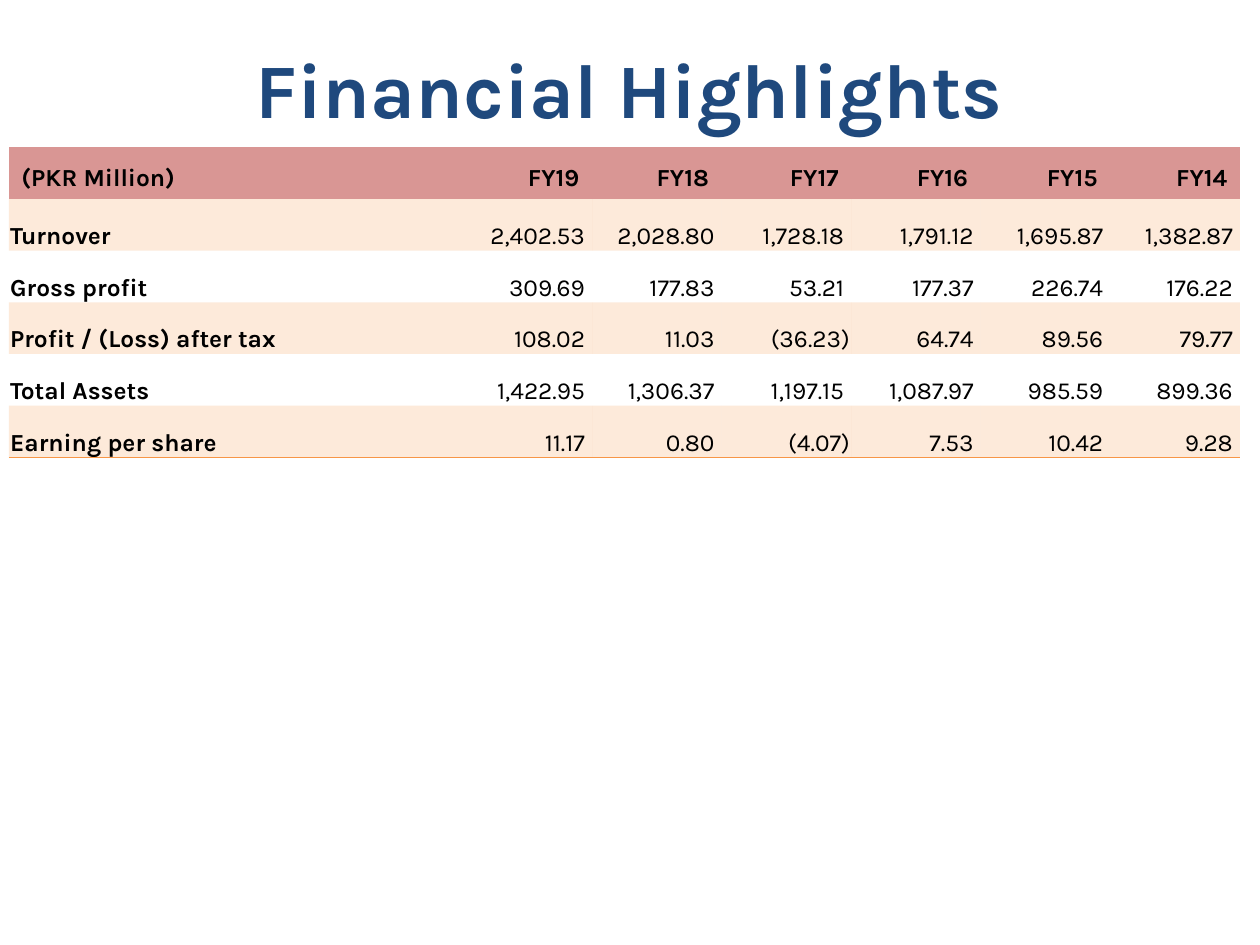
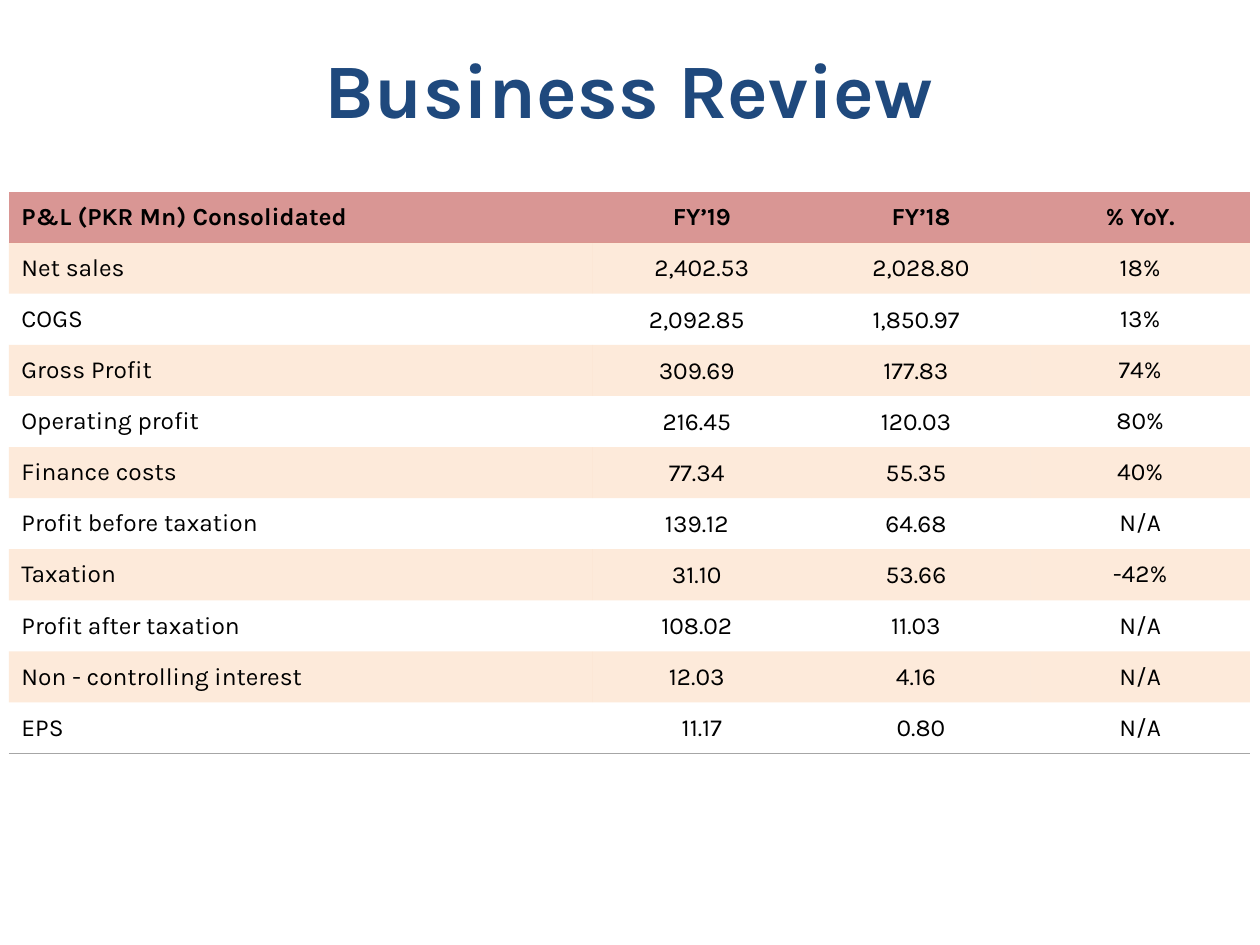
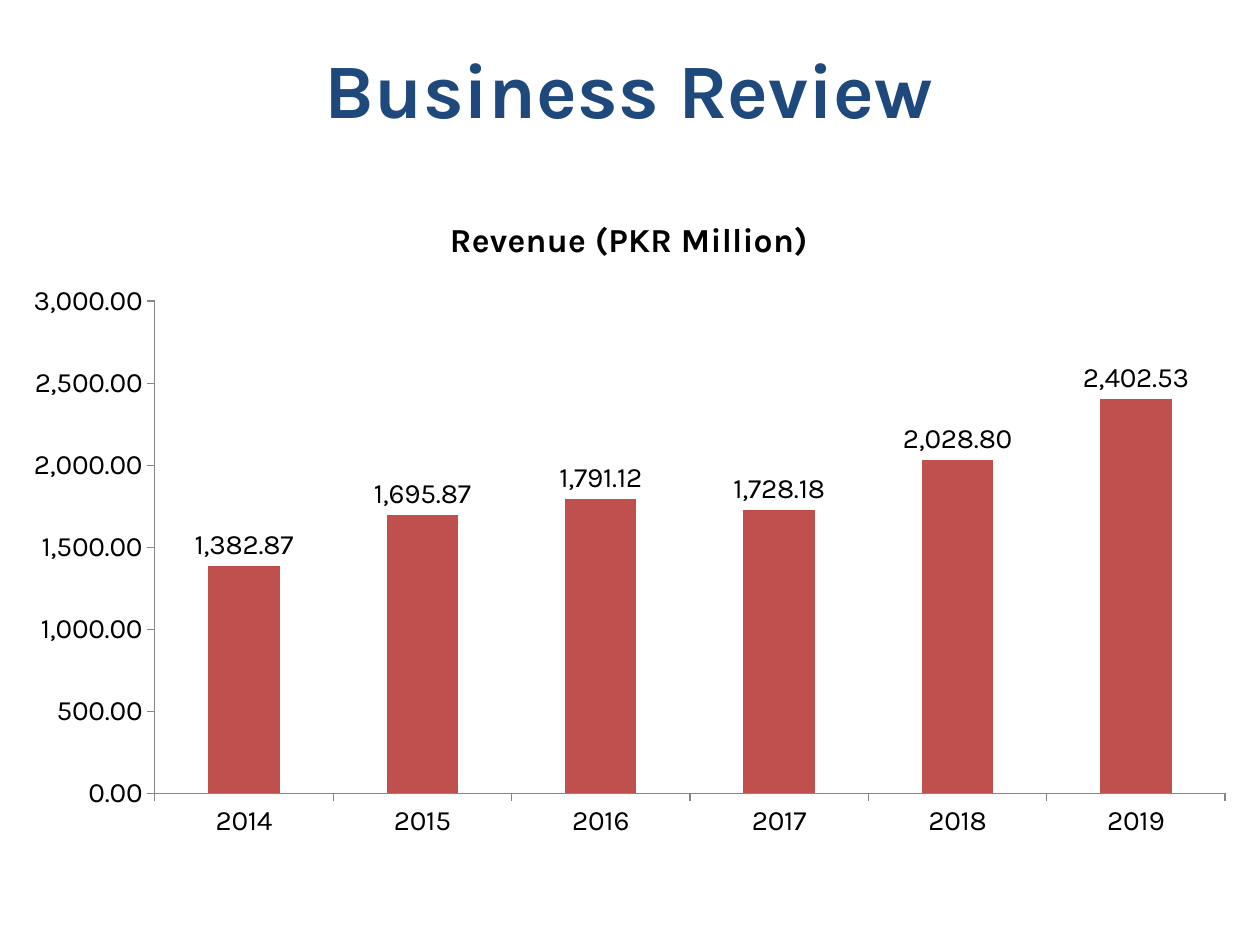
"""Build three slides of financial results: two tables and a revenue chart."""
from dataclasses import dataclass

from lxml import etree
from pptx import Presentation
from pptx.chart.data import CategoryChartData
from pptx.dml.color import RGBColor
from pptx.enum.chart import XL_CHART_TYPE, XL_LABEL_POSITION, XL_TICK_MARK
from pptx.enum.text import MSO_ANCHOR, MSO_AUTO_SIZE, PP_ALIGN
from pptx.oxml.ns import qn
from pptx.util import Pt

LEFT, CENTER, RIGHT = PP_ALIGN.LEFT, PP_ALIGN.CENTER, PP_ALIGN.RIGHT
MIDDLE, BOTTOM = MSO_ANCHOR.MIDDLE, MSO_ANCHOR.BOTTOM
COLUMN_CLUSTERED = XL_CHART_TYPE.COLUMN_CLUSTERED
OUTSIDE_END = XL_LABEL_POSITION.OUTSIDE_END
TICK_OUTSIDE, TICK_NONE = XL_TICK_MARK.OUTSIDE, XL_TICK_MARK.NONE
NO_AUTOFIT = MSO_AUTO_SIZE.NONE
PLAIN_TABLE_STYLE = "{2D5ABB26-0587-4C30-8999-92F81FD0307C}"


@dataclass(frozen=True)
class Theme:
    font: str = "Karla"
    title: str = "1F497D"
    text: str = "000000"
    header: str = "D99694"
    accent: str = "F79646"
    rule: str = "A6A6A6"
    bar: str = "C0504D"
    axis: str = "868686"
    band_alpha: int = 20000
    title_size: float = 44
    table_size: float = 14
    chart_size: float = 16
    chart_title_size: float = 19.2


THEME = Theme()
LEFT_EDGE, CONTENT_WIDTH = 5.04, 709.2
CONTENT_TOP = 109.44
TITLE_BOX = (LEFT_EDGE, 5.04, CONTENT_WIDTH, 90)
CHART_BOX = (LEFT_EDGE, CONTENT_TOP, CONTENT_WIDTH, 376.56)
DEFAULT_INSETS = (7.2, 3.6, 7.2, 3.6)
TIGHT_INSETS = (0.72, 0.72, 0.72, 0)
POSITIVE_INSETS = (0.72, 0.72, 4, 0)
CENTERED_INSETS = (0.72, 0.72, 6.48, 0)

HIGHLIGHTS_TITLE = "Financial Highlights"
HIGHLIGHTS = [
    ("(PKR Million)", "FY19", "FY18", "FY17", "FY16", "FY15", "FY14"),
    ("Turnover", "2,402.53", "2,028.80", "1,728.18", "1,791.12", "1,695.87", "1,382.87"),
    ("Gross profit", "309.69", "177.83", "53.21", "177.37", "226.74", "176.22"),
    ("Profit / (Loss) after tax", "108.02", "11.03", "(36.23)", "64.74", "89.56", "79.77"),
    ("Total Assets", "1,422.95", "1,306.37", "1,197.15", "1,087.97", "985.59", "899.36"),
    ("Earning per share", "11.17", "0.80", "(4.07)", "7.53", "10.42", "9.28"),
]

REVIEW_TITLE = "Business Review"
PROFIT_AND_LOSS = [
    ("P&L (PKR Mn) Consolidated", "FY’19", "FY’18", "% YoY."),
    ("Net sales", "2,402.53", "2,028.80", "18%"),
    ("COGS", "2,092.85", "1,850.97", "13%"),
    ("Gross Profit", "309.69", "177.83", "74%"),
    ("Operating profit", "216.45", "120.03", "80%"),
    ("Finance costs", "77.34", "55.35", "40%"),
    ("Profit before taxation", "139.12", "64.68", "N/A"),
    ("Taxation", "31.10", "53.66", "-42%"),
    ("Profit after taxation", "108.02", "11.03", "N/A"),
    ("Non - controlling interest", "12.03", "4.16", "N/A"),
    ("EPS", "11.17", "0.80", "N/A"),
]

REVENUE_NAME = "Revenue (PKR Million)"
REVENUE = {
    "2014": 1382.87,
    "2015": 1695.87,
    "2016": 1791.12,
    "2017": 1728.18,
    "2018": 2028.80,
    "2019": 2402.53,
}


def rgb(value):
    return RGBColor.from_string(value)


def style_font(font, size, color=THEME.text, bold=False):
    font.name = THEME.font
    font.size = Pt(size)
    font.bold = bold
    font.color.rgb = rgb(color)


def add_titled_slide(presentation, text):
    slide = presentation.slides.add_slide(presentation.slide_layouts[5])
    title = slide.shapes.title
    title.left, title.top, title.width, title.height = map(Pt, TITLE_BOX)
    frame = title.text_frame
    frame.text = text
    frame.vertical_anchor = MIDDLE
    frame.auto_size = NO_AUTOFIT
    paragraph = frame.paragraphs[0]
    paragraph.alignment = CENTER
    style_font(paragraph.runs[0].font, THEME.title_size, THEME.title, True)
    return slide


def fill_cell(cell, row_index):
    if row_index > 0 and row_index % 2 == 0:
        cell.fill.background()
        return
    cell.fill.solid()
    cell.fill.fore_color.rgb = rgb(THEME.accent if row_index else THEME.header)
    if row_index:
        color = cell._tc.tcPr.find(f"{qn('a:solidFill')}/{qn('a:srgbClr')}")
        etree.SubElement(color, qn("a:alpha"), val=str(THEME.band_alpha))


def add_bottom_border(cell, color, width):
    line = etree.Element(qn("a:lnB"), w=str(Pt(width)))
    fill = etree.SubElement(line, qn("a:solidFill"))
    etree.SubElement(fill, qn("a:srgbClr"), val=color)
    cell._tc.get_or_add_tcPr().insert(0, line)


def highlights_insets(row, column, text):
    if row == 0:
        return DEFAULT_INSETS
    return TIGHT_INSETS if column == 0 or text.startswith("(") else POSITIVE_INSETS


def review_insets(row, column, text):
    in_body = 1 < row < len(PROFIT_AND_LOSS) - 1
    return CENTERED_INSETS if in_body and column in (1, 2) else DEFAULT_INSETS


def add_table(slide, rows, top, row_height, label_width, value_width,
              alignment, anchor, insets, bold_labels, border):
    value_count = len(rows[0]) - 1
    widths = [label_width] + [value_width] * value_count
    table = slide.shapes.add_table(
        len(rows), len(widths), Pt(LEFT_EDGE), Pt(top),
        Pt(sum(widths)), Pt(row_height * len(rows))).table
    table._tbl.tblPr.find(qn("a:tableStyleId")).text = PLAIN_TABLE_STYLE
    table.horz_banding = False
    for column, width in zip(table.columns, widths):
        column.width = Pt(width)
    for row_index, values in enumerate(rows):
        table.rows[row_index].height = Pt(row_height)
        for column_index, text in enumerate(values):
            cell = table.cell(row_index, column_index)
            cell.text = text
            cell.vertical_anchor = anchor
            (cell.margin_left, cell.margin_top, cell.margin_right,
             cell.margin_bottom) = map(Pt, insets(row_index, column_index, text))
            fill_cell(cell, row_index)
            paragraph = cell.text_frame.paragraphs[0]
            paragraph.alignment = alignment if column_index else LEFT
            bold = row_index == 0 or (bold_labels and column_index == 0)
            style_font(paragraph.runs[0].font, THEME.table_size, bold=bold)
            if row_index == len(rows) - 1:
                add_bottom_border(cell, *border)


def add_revenue_chart(slide):
    data = CategoryChartData(number_format="#,##0.00")
    data.categories = list(REVENUE)
    data.add_series(REVENUE_NAME, list(REVENUE.values()))
    chart = slide.shapes.add_chart(COLUMN_CLUSTERED, *map(Pt, CHART_BOX), data).chart
    style_font(chart.font, THEME.chart_size)
    chart.has_legend = False
    chart.has_title = True
    title = chart.chart_title
    title.include_in_layout = False
    title.text_frame.text = REVENUE_NAME
    style_font(title.text_frame.paragraphs[0].runs[0].font,
               THEME.chart_title_size, bold=True)

    plot = chart.plots[0]
    plot.gap_width = 150
    plot.vary_by_categories = False
    plot.has_data_labels = True
    labels = plot.data_labels
    labels.show_value = True
    labels.position = OUTSIDE_END
    style_font(labels.font, THEME.chart_size)
    bar_fill = plot.series[0].format.fill
    bar_fill.solid()
    bar_fill.fore_color.rgb = rgb(THEME.bar)

    for axis in (chart.category_axis, chart.value_axis):
        axis.has_major_gridlines = False
        axis.major_tick_mark = TICK_OUTSIDE
        axis.minor_tick_mark = TICK_NONE
        axis.format.line.color.rgb = rgb(THEME.axis)
        axis.format.line.width = Pt(0.75)
        style_font(axis.tick_labels.font, THEME.chart_size)
    value_axis = chart.value_axis
    value_axis.minimum_scale, value_axis.maximum_scale = 0, 3000
    value_axis.major_unit = 500
    value_axis.tick_labels.number_format = "#,##0.00"
    value_axis.tick_labels.number_format_is_linked = False


def main():
    presentation = Presentation()
    presentation.slide_width, presentation.slide_height = Pt(720), Pt(540)

    add_table(add_titled_slide(presentation, HIGHLIGHTS_TITLE), HIGHLIGHTS,
              top=84.24, row_height=29.52, label_width=259.2, value_width=74.06,
              alignment=RIGHT, anchor=BOTTOM, insets=highlights_insets,
              bold_labels=True, border=(THEME.accent, 1))
    add_table(add_titled_slide(presentation, REVIEW_TITLE), PROFIT_AND_LOSS,
              top=CONTENT_TOP, row_height=29.2, label_width=333.36, value_width=125.28,
              alignment=CENTER, anchor=MIDDLE, insets=review_insets,
              bold_labels=False, border=(THEME.rule, 0.75))
    add_revenue_chart(add_titled_slide(presentation, REVIEW_TITLE))

    presentation.save("out.pptx")


if __name__ == "__main__":
    main()
